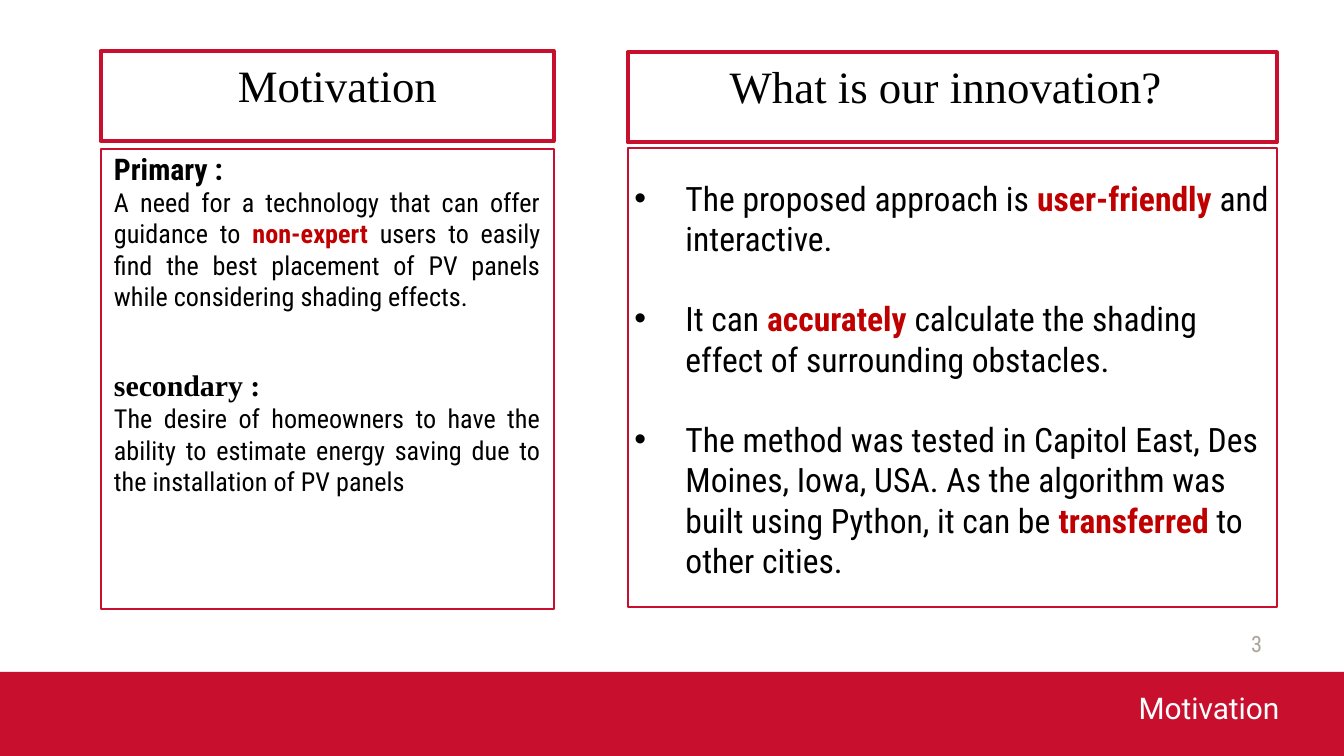
from lxml.etree import SubElement
from pptx import Presentation
from pptx.dml.color import RGBColor
from pptx.enum.shapes import MSO_SHAPE
from pptx.enum.text import MSO_ANCHOR, MSO_AUTO_SIZE, PP_ALIGN
from pptx.oxml.ns import qn
from pptx.util import Inches, Pt

SLIDE_WIDTH = 10
SLIDE_HEIGHT = SLIDE_WIDTH * 9 / 16
BAND_TOP = 5
RED, ACCENT, BLACK, WHITE, GREY = "C8102E", "C00000", "000000", "FFFFFF", "ACA39A"
CONDENSED, SERIF = "Roboto Condensed", "Times New Roman"

# Words between asterisks are emphasised.
FOOTER = "Motivation"
PAGE_NUMBER = "3"
PANELS = [  # heading, left, width, heading top, heading inset, body top
    ("Motivation", 0.75, 3.37, 0.38, 1.02, 1.11),
    ("What is our innovation?", 4.67, 4.83, 0.39, 0.76, 1.1),
]
MOTIVATIONS = [  # label, label font, top, height, explanation
    ("Primary :", CONDENSED, 1.07, 1.51,
     "A need for a technology that can offer guidance to *non-expert* users to easily "
     "find the best placement of PV panels while considering shading effects."),
    ("secondary :", SERIF, 2.68, 1.38,
     "The desire of homeowners to have the ability to estimate energy saving due to "
     "the installation of PV panels"),
]
INNOVATIONS = [
    "The proposed approach is *user-friendly *and interactive.",
    "It can *accurately *calculate the shading effect of surrounding obstacles.",
    "The method was tested in Capitol East, Des Moines, Iowa, USA. As the algorithm was "
    "built using Python, it can be *transferred* to other cities.",
]


def color(hex_value):
    return RGBColor.from_string(hex_value)


def place(shape, left, top, width, height):
    shape.left, shape.top = Inches(left), Inches(top)
    shape.width, shape.height = Inches(width), Inches(height)


def add_rectangle(slide, box, fill=None, line=None, line_width=1):
    shape = slide.shapes.add_shape(MSO_SHAPE.RECTANGLE, *map(Inches, box))
    shape.shadow.inherit = False
    if fill:
        shape.fill.solid()
        shape.fill.fore_color.rgb = color(fill)
    else:
        shape.fill.background()
    if line:
        shape.line.color.rgb = color(line)
        shape.line.width = Pt(line_width)
    else:
        shape.line.fill.background()
    return shape


def add_text_box(slide, box):
    return slide.shapes.add_textbox(*map(Inches, box))


def prepare_frame(shape, anchor=MSO_ANCHOR.TOP):
    frame = shape.text_frame
    frame.word_wrap = True
    frame.auto_size = MSO_AUTO_SIZE.NONE
    frame.vertical_anchor = anchor
    return frame


def write(frame, text, size, font=CONDENSED, fill=BLACK, bold=False,
          align=PP_ALIGN.LEFT, before=0, bullet_indent=None):
    """Append a paragraph, using the empty first one when there is one."""
    first = frame.paragraphs[0]
    paragraph = frame.add_paragraph() if first.runs else first
    if bullet_indent:
        properties = paragraph._p.get_or_add_pPr()
        properties.set("marL", str(Inches(bullet_indent)))
        properties.set("indent", str(-Inches(bullet_indent)))
        SubElement(properties, qn("a:buChar")).set("char", "•")
    paragraph.alignment = align
    paragraph.space_before = Pt(before)
    for index, part in enumerate(text.split("*")):
        if not part:
            continue
        emphasised = index % 2 == 1
        run = paragraph.add_run()
        run.text = part
        run.font.size = Pt(size)
        run.font.name = font
        run.font.bold = bold or emphasised
        run.font.color.rgb = color(ACCENT if emphasised else fill)


def main():
    presentation = Presentation()
    presentation.slide_width = Inches(SLIDE_WIDTH)
    presentation.slide_height = Inches(SLIDE_HEIGHT)
    slide = presentation.slides.add_slide(presentation.slide_layouts[1])

    band = add_rectangle(
        slide, (0, BAND_TOP, SLIDE_WIDTH, SLIDE_HEIGHT - BAND_TOP), fill=RED)
    slide.shapes._spTree.insert(2, band._element)  # behind the title

    title, body = slide.placeholders
    place(title, 6.95, 5.08, 2.67, 0.31)
    write(prepare_frame(title), FOOTER, 16, font="Roboto", fill=WHITE, align=PP_ALIGN.RIGHT)

    number = add_text_box(slide, (7.16, 4.64, 2.33, 0.3))
    write(prepare_frame(number, MSO_ANCHOR.MIDDLE), PAGE_NUMBER, 12, fill=GREY,
          align=PP_ALIGN.RIGHT)

    for heading, left, width, top, inset, body_top in PANELS:
        header = add_rectangle(slide, (left, top, width, 0.67), line=RED, line_width=2.25)
        frame = prepare_frame(header)
        frame.margin_left = Inches(inset)
        write(frame, heading, 24, font=SERIF)
        add_rectangle(slide, (left, body_top, width, 3.42), line=RED)

    for label, label_font, top, height, explanation in MOTIVATIONS:
        frame = prepare_frame(add_text_box(slide, (0.75, top, 3.37, height)))
        write(frame, label, 16, font=label_font, bold=True, align=PP_ALIGN.JUSTIFY)
        write(frame, explanation, 14, align=PP_ALIGN.JUSTIFY)

    place(body, 4.62, 1.27, 5, 3.13)
    frame = prepare_frame(body)
    for index, innovation in enumerate(INNOVATIONS):
        write(frame, innovation, 18, before=21.5 if index else 0, bullet_indent=0.38)

    presentation.save("out.pptx")


if __name__ == "__main__":
    main()
